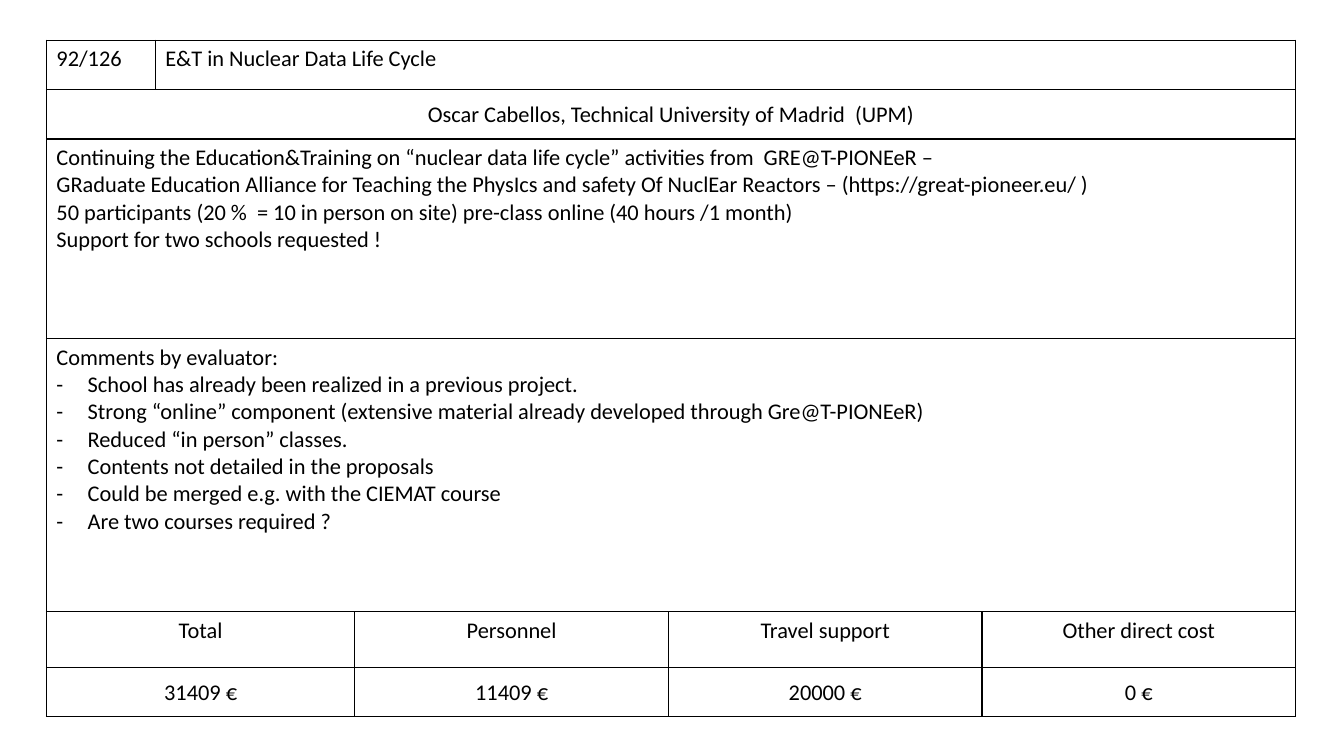
"""Build the evaluation sheet slide for the nuclear data training proposal."""
from lxml.etree import SubElement
from pptx import Presentation
from pptx.dml.color import RGBColor as RGB
from pptx.enum.text import MSO_ANCHOR as Anchor, PP_ALIGN as Align
from pptx.oxml.ns import qn
from pptx.util import Inches, Pt

BLACK = RGB(0, 0, 0)
WIDTHS = [1.08, 1.98, 3.11, 3.11, 3.11]
HEIGHTS = [0.49, 0.49, 1.98, 2.71, 0.55, 0.49]
SPANS = [(0, 1, 4), (1, 0, 4), (2, 0, 4), (3, 0, 4), (4, 0, 1), (5, 0, 1)]

SUMMARY = [
    "Continuing the Education&Training on “nuclear data life cycle” activities from  GRE@T-PIONEeR – ",
    "GRaduate Education Alliance for Teaching the PhysIcs and safety Of NuclEar Reactors – (https://great-pioneer.eu/ )",
    "50 participants (20 %  = 10 in person on site) pre-class online (40 hours /1 month)",
    "Support for two schools requested !",
]
REMARKS = [
    "School has already been realized in a previous project.",
    "Strong “online” component (extensive material already developed through Gre@T-PIONEeR)",
    "Reduced “in person” classes.",
    "Contents not detailed in the proposals",
    "Could be merged e.g. with the CIEMAT course",
    "Are two courses required ?",
]
COSTS = [
    (0, "Total", "31409 €"),
    (2, "Personnel", "11409 €"),
    (3, "Travel support", "20000 €"),
    (4, "Other direct cost", "0 €"),
]


def add_run(para, text, align=Align.LEFT):
    para.alignment = align
    run = para.add_run()
    run.text = text
    run.font.name = "Calibri"
    run.font.size = Pt(16)
    run.font.bold = False
    run.font.color.rgb = BLACK


def set_mid(cell, text):
    cell.vertical_anchor = Anchor.MIDDLE
    cell.margin_left = cell.margin_right = cell.margin_top = Inches(0.01)
    cell.margin_bottom = 0
    add_run(cell.text_frame.paragraphs[0], text, Align.CENTER)


prs = Presentation()
prs.slide_width, prs.slide_height = Inches(13.33), Inches(7.5)
slide = prs.slides.add_slide(prs.slide_layouts[6])

frame = slide.shapes.add_table(len(HEIGHTS), len(WIDTHS), Inches(0.46), Inches(0.4),
                               Inches(sum(WIDTHS)), Inches(sum(HEIGHTS)))
table = frame.table
table.first_row = table.horz_banding = False
for col, width in zip(table.columns, WIDTHS):
    col.width = Inches(width)
for row, height in zip(table.rows, HEIGHTS):
    row.height = Inches(height)

for cell in table.iter_cells():
    props = cell._tc.get_or_add_tcPr()
    for side in ("a:lnL", "a:lnR", "a:lnT", "a:lnB"):
        line = SubElement(props, qn(side), w=str(Pt(1)))
        fill = SubElement(line, qn("a:solidFill"))
        SubElement(fill, qn("a:srgbClr"), val=str(BLACK))
    cell.fill.background()

for row, first, last in SPANS:
    table.cell(row, first).merge(table.cell(row, last))

add_run(table.cell(0, 0).text_frame.paragraphs[0], "92/126")
add_run(table.cell(0, 1).text_frame.paragraphs[0], "E&T in Nuclear Data Life Cycle")
set_mid(table.cell(1, 0), "Oscar Cabellos, Technical University of Madrid  (UPM)")

para = table.cell(2, 0).text_frame.paragraphs[0]
for num, text in enumerate(SUMMARY):
    if num:
        para.add_line_break()
    add_run(para, text)

notes = table.cell(3, 0).text_frame
add_run(notes.paragraphs[0], "Comments by evaluator:")
for text in REMARKS:
    para = notes.add_paragraph()
    add_run(para, text)
    props = para._p.get_or_add_pPr()
    props.set("marL", str(Inches(0.31)))
    props.set("indent", str(-Inches(0.31)))
    SubElement(props, qn("a:buFont"), typeface="Calibri")
    SubElement(props, qn("a:buChar"), char="-")

for col, label, cost in COSTS:
    add_run(table.cell(4, col).text_frame.paragraphs[0], label, Align.CENTER)
    set_mid(table.cell(5, col), cost)

prs.save("out.pptx")
